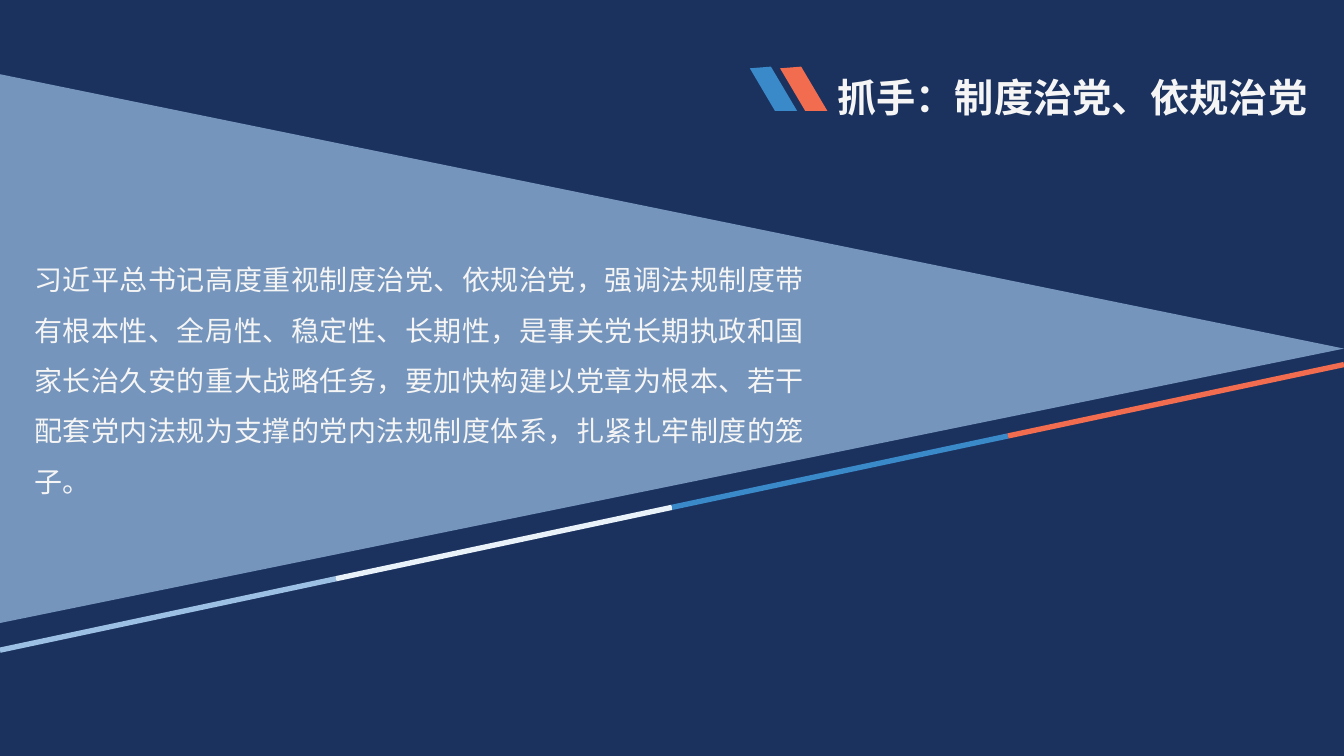
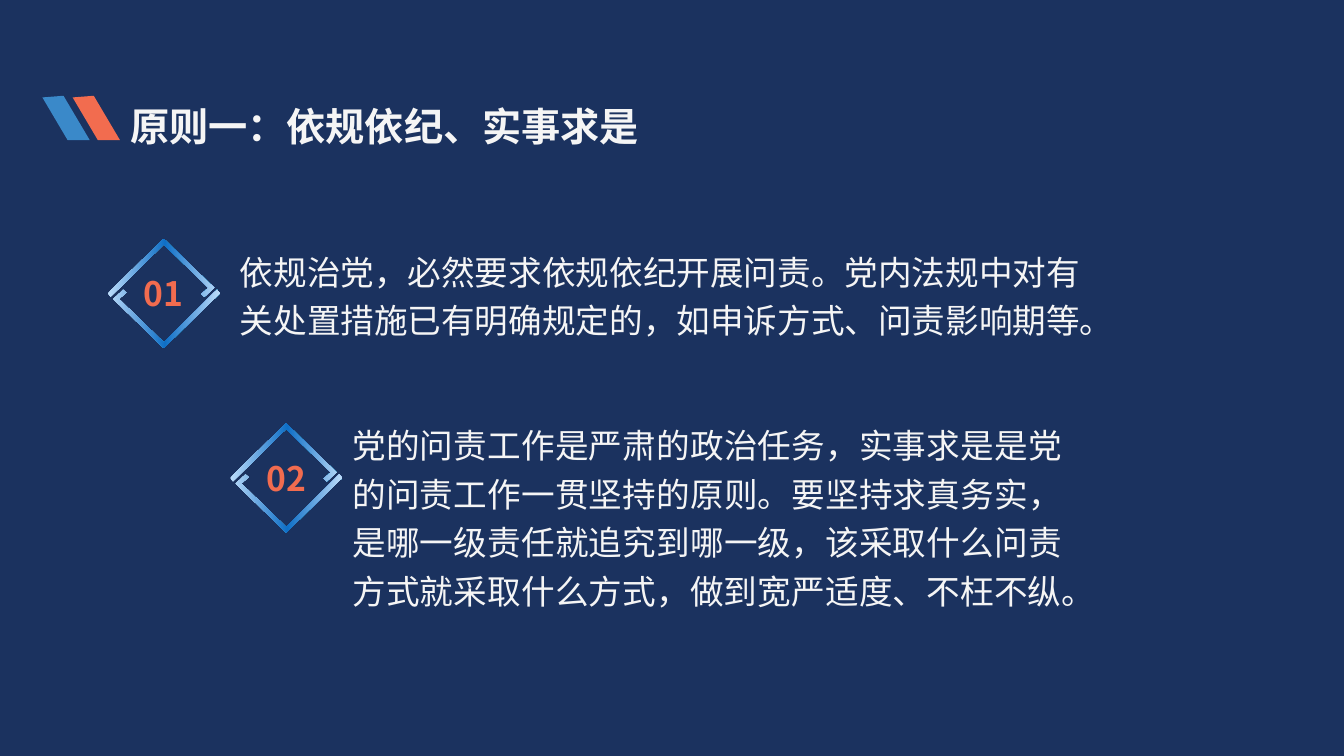
from copy import deepcopy
from dataclasses import dataclass

from lxml.etree import SubElement
from pptx import Presentation
from pptx.dml.color import RGBColor as RGB
from pptx.enum.shapes import MSO_CONNECTOR as CONN, MSO_SHAPE as SHAPE
from pptx.enum.text import MSO_ANCHOR as ANCHOR, MSO_AUTO_SIZE as AUTO, PP_ALIGN as ALIGN
from pptx.oxml.ns import qn
from pptx.util import Pt


@dataclass(frozen=True)
class Theme:
    width: int = 960
    height: int = 540
    font: str = "Noto Sans CJK SC"
    navy: str = "1B325F"
    sky: str = "9CC0E4"
    ice: str = "E9F2F9"
    blue: str = "3A89C9"
    coral: str = "F26C4F"
    text: str = "F5F5F5"
    rim: str = "BCDCFA"
    core: str = "0F6FC6"
    title_size: int = 28
    item_size: int = 24
    body_size: int = 20


T = Theme()

# Outline of the lower half of a number diamond; the upper half is its half turn
DIAMOND_W, DIAMOND_H = 80, 78
HALF_DIAMOND = [(11, 36.5), (13.2, 38.5), (8, 43), (40, 74),
                (78, 36.5), (80, 39), (40, 78), (4, 43)]

# Slanted mark, relative to the top left of the title box
SLASH = [(-55.4, 7), (-40.3, 5.8), (-21.6, 37.4), (-37.4, 37.4)]
SLASH_STEP = 21.6


def paint(sp, color):
    """Flat fill, no line, no shadow."""
    sp.fill.solid()
    sp.fill.fore_color.rgb = RGB.from_string(color)
    sp.line.fill.background()
    sp.shadow.inherit = False


def write(sp, text, size, color=T.text, bold=False, align=ALIGN.LEFT,
          spacing=1.0, anchor=ANCHOR.TOP, margins=(7.2, 3.6)):
    """Put one formatted paragraph into a shape."""
    tf = sp.text_frame
    mx, my = (Pt(m) for m in margins)
    frame = dict(word_wrap=True, auto_size=AUTO.NONE, vertical_anchor=anchor,
                 margin_left=mx, margin_right=mx, margin_top=my, margin_bottom=my)
    p = tf.paragraphs[0]
    r = p.add_run()
    r.text = text
    formats = (
        (tf, frame),
        (p, dict(alignment=align, line_spacing=spacing, space_before=Pt(0))),
        (r.font, dict(size=Pt(size), bold=bold, name=T.font)),
    )
    for target, values in formats:
        for key, value in values.items():
            setattr(target, key, value)
    r.font.color.rgb = RGB.from_string(color)
    SubElement(r.font._element, qn("a:ea")).set("typeface", T.font)


def add_text(slide, box, text, size, **fmt):
    sp = slide.shapes.add_textbox(*(Pt(v) for v in box))
    write(sp, text, size, **fmt)


def outline(slide, left, top, contours):
    """Closed freeform from contours given relative to left, top."""
    builder = None
    for contour in contours:
        pts = [(Pt(left + x), Pt(top + y)) for x, y in contour]
        if builder is None:
            builder = slide.shapes.build_freeform(*pts[0], scale=1.0)
        else:
            builder.move_to(*pts[0])
        builder.add_line_segments(pts[1:], close=True)
    return builder.convert_to_shape()


def add_title(slide, box, text):
    """Title with its pair of slanted marks on the left."""
    left, top, width, height = box
    sp = slide.shapes.title
    sp.left, sp.top, sp.width, sp.height = (Pt(v) for v in box)
    write(sp, text, T.title_size, bold=True, spacing=1.2)
    for i, color in enumerate((T.blue, T.coral)):
        paint(outline(slide, left + i * SLASH_STEP, top, [SLASH]), color)


def add_wedge(slide, box):
    """Translucent triangle pointing right, filling the box."""
    left, top, width, height = box
    sp = slide.shapes.add_shape(
        SHAPE.ISOSCELES_TRIANGLE,
        Pt(left + (width - height) / 2), Pt(top + (height - width) / 2),
        Pt(height), Pt(width))
    sp.rotation = 90
    paint(sp, T.sky)
    clr = sp._element.spPr.find(qn("a:solidFill")).find(qn("a:srgbClr"))
    SubElement(clr, qn("a:alpha")).set("val", "70000")


def add_stripe(slide, box):
    """Rising line in equal coloured parts, bottom left to top right."""
    left, top, width, height = box
    colors = (T.sky, T.ice, T.blue, T.coral)
    dx, dy = width / len(colors), height / len(colors)
    for i, color in enumerate(colors):
        x, y = left + i * dx, top + height - i * dy
        line = slide.shapes.add_connector(
            CONN.STRAIGHT, Pt(x), Pt(y), Pt(x + dx), Pt(y - dy))
        line.line.width = Pt(3.8)
        line.line.color.rgb = RGB.from_string(color)
        SubElement(line._element.spPr, qn("a:effectLst"))


def add_diamond(slide, left, top, number):
    """Open diamond with a three-stop gradient and a number."""
    turned = [(DIAMOND_W - x, DIAMOND_H - y) for x, y in HALF_DIAMOND]
    sp = outline(slide, left, top, [HALF_DIAMOND, turned])
    paint(sp, T.core)
    sp.fill.gradient()
    sp.fill.gradient_angle = 0
    stops = sp._element.spPr.find(qn("a:gradFill")).find(qn("a:gsLst"))
    stops.append(deepcopy(stops[0]))
    ramp = ((0, T.rim), (0.51, T.core), (1, T.rim))
    for stop, (position, color) in zip(sp.fill.gradient_stops, ramp):
        stop.position = position
        stop.color.rgb = RGB.from_string(color)
    write(sp, number, T.item_size, color=T.coral, bold=True,
          align=ALIGN.CENTER, anchor=ANCHOR.MIDDLE)


def new_slide(prs):
    return prs.slides.add_slide(prs.slide_layouts[5])


def wedge_slide(prs, title, body):
    slide = new_slide(prs)
    add_wedge(slide, (0, 53, T.width, 392))
    add_stripe(slide, (0, 260.4, T.width, 204))
    add_title(slide, (591, 41.8, 369, 48), title)
    add_text(slide, (24.5, 175.7, 550, 182), body, T.body_size,
             align=ALIGN.JUSTIFY, spacing=1.5, margins=(0, 0))


def principle_slide(prs, title, items):
    slide = new_slide(prs)
    add_title(slide, (85.7, 62.6, 458, 48), title)
    for i, (diamond, box, align, text) in enumerate(items, 1):
        add_diamond(slide, *diamond, f"{i:02}")
        add_text(slide, box, text, T.item_size, align=align, spacing=1.2)


def main():
    prs = Presentation()
    prs.slide_width, prs.slide_height = Pt(T.width), Pt(T.height)

    # Shared background
    fill = prs.slide_master.background.fill
    fill.solid()
    fill.fore_color.rgb = RGB.from_string(T.navy)

    wedge_slide(
        prs, "抓手：制度治党、依规治党",
        "习近平总书记高度重视制度治党、依规治党，强调法规制度带有根本性、全局性、"
        "稳定性、长期性，是事关党长期执政和国家长治久安的重大战略任务，要加快构建"
        "以党章为根本、若干配套党内法规为支撑的党内法规制度体系，扎紧扎牢制度的笼子。")

    principle_slide(prs, "原则一：依规依纪、实事求是", [
        ((77, 170.6), (164.2, 170.6, 635, 77), ALIGN.LEFT,
         "依规治党，必然要求依规依纪开展问责。党内法规中对有关处置措施已有明确"
         "规定的，如申诉方式、问责影响期等。"),
        ((164.4, 302.4), (244.6, 294.5, 521.3, 147), ALIGN.JUSTIFY,
         "党的问责工作是严肃的政治任务，实事求是是党的问责工作一贯坚持的原则。"
         "要坚持求真务实，是哪一级责任就追究到哪一级，该采取什么问责方式就采取"
         "什么方式，做到宽严适度、不枉不纵。"),
    ])

    prs.save("out.pptx")


if __name__ == "__main__":
    main()
